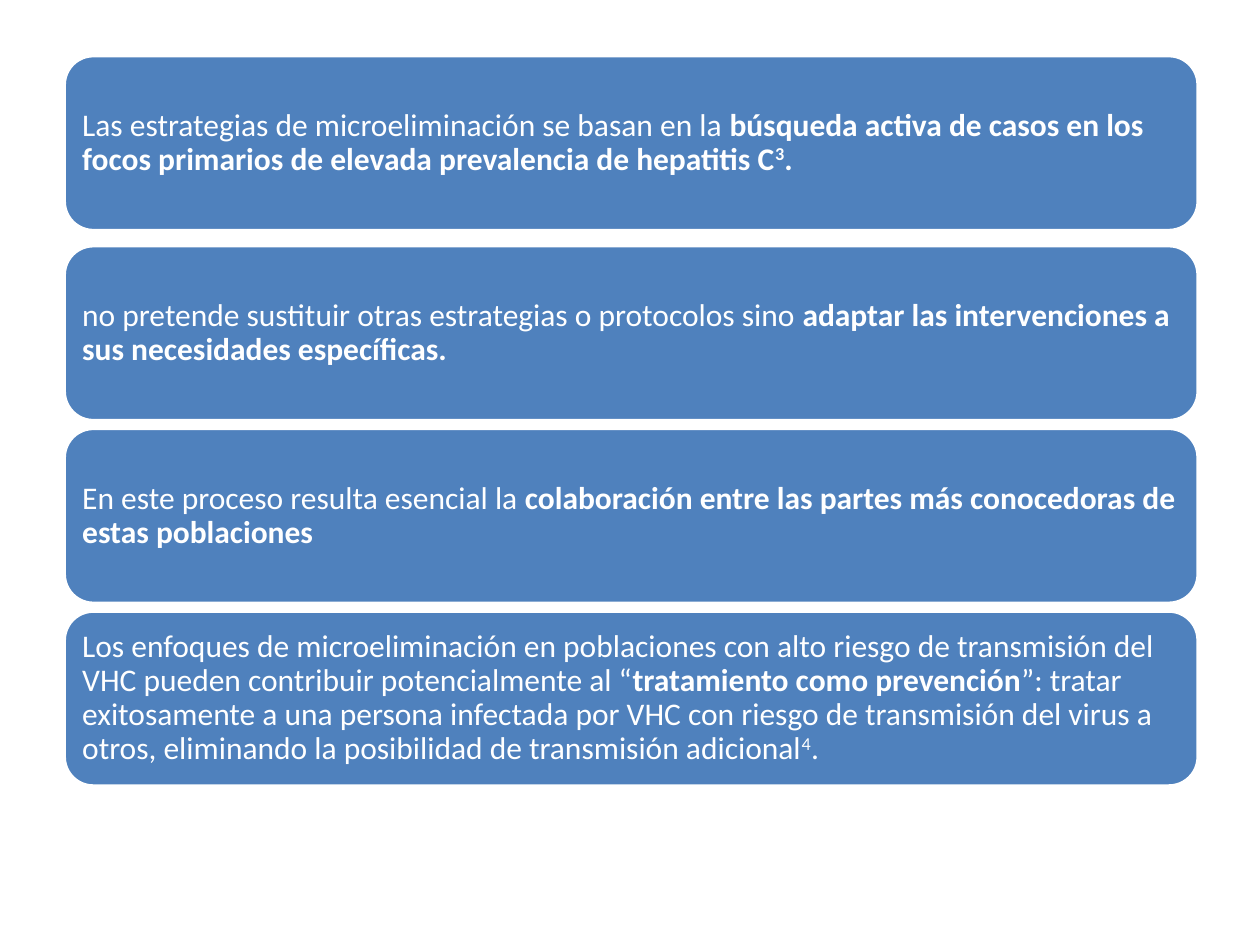
from dataclasses import dataclass
from typing import NamedTuple

from pptx import Presentation
from pptx.dml.color import RGBColor
from pptx.enum.shapes import MSO_SHAPE
from pptx.enum.text import MSO_ANCHOR, PP_ALIGN
from pptx.slide import Slide
from pptx.util import Pt

ROUNDED = MSO_SHAPE.ROUNDED_RECTANGLE
MIDDLE = MSO_ANCHOR.MIDDLE
LEFT = PP_ALIGN.LEFT


@dataclass(frozen=True)
class Theme:
    panel: RGBColor = RGBColor(0x4F, 0x81, 0xBD)
    light: RGBColor = RGBColor(0xFF, 0xFF, 0xFF)
    font: str = "Calibri"
    body_size: float = 18
    outline: float = 2


class Phrase(NamedTuple):
    text: str
    bold: bool = False
    superscript: bool = False


class Statement(NamedTuple):
    top: float
    phrases: list[Phrase]


THEME = Theme()
PANEL_LEFT, PANEL_WIDTH, PANEL_HEIGHT = 36.7, 648, 100
FIRST_TOP = 31.8
SECOND_TOP, PITCH = 140.4, 104.4

STATEMENTS = [
    Statement(FIRST_TOP, [
        Phrase("Las estrategias de microeliminación se basan en la "),
        Phrase("búsqueda activa de casos en los focos primarios de elevada "
               "prevalencia de hepatitis C", bold=True),
        Phrase("3", bold=True, superscript=True),
        Phrase(".", bold=True),
    ]),
    Statement(SECOND_TOP, [
        Phrase("no pretende sustituir otras estrategias o protocolos sino "),
        Phrase("adaptar las intervenciones a sus necesidades específicas.", bold=True),
    ]),
    Statement(SECOND_TOP + PITCH, [
        Phrase("En este proceso resulta esencial la "),
        Phrase("colaboración entre las partes más conocedoras de estas poblaciones",
               bold=True),
    ]),
    Statement(SECOND_TOP + 2 * PITCH, [
        Phrase("Los enfoques de microeliminación en poblaciones con alto riesgo de "
               "transmisión del VHC pueden contribuir potencialmente al “"),
        Phrase("tratamiento como prevención", bold=True),
        Phrase("”: tratar exitosamente a una persona infectada por VHC con riesgo de "
               "transmisión del virus a otros, eliminando la posibilidad de "
               "transmisión adicional"),
        Phrase("4", superscript=True),
        Phrase("."),
    ]),
]

FRAME_FORMAT = {
    "word_wrap": True,
    "vertical_anchor": MIDDLE,
    "margin_left": Pt(5.4),
    "margin_right": Pt(5.4),
    "margin_top": Pt(5.4),
    "margin_bottom": Pt(5.4),
}
FONT_FORMAT = {"name": THEME.font, "size": Pt(THEME.body_size)}


def apply_format(target: object, values: dict) -> None:
    for attribute, value in values.items():
        setattr(target, attribute, value)


def draw_statement(slide: Slide, statement: Statement) -> None:
    panel = slide.shapes.add_shape(
        ROUNDED, Pt(PANEL_LEFT), Pt(statement.top), Pt(PANEL_WIDTH), Pt(PANEL_HEIGHT))
    panel.shadow.inherit = False
    panel.fill.solid()
    panel.fill.fore_color.rgb = THEME.panel
    panel.line.color.rgb = THEME.light
    panel.line.width = Pt(THEME.outline)

    apply_format(panel.text_frame, FRAME_FORMAT)
    paragraph = panel.text_frame.paragraphs[0]
    apply_format(paragraph, {"alignment": LEFT, "line_spacing": 0.9})
    for phrase in statement.phrases:
        run = paragraph.add_run()
        run.text = phrase.text
        apply_format(run.font, FONT_FORMAT | {"bold": phrase.bold})
        run.font.color.rgb = THEME.light
        if phrase.superscript:
            run._r.get_or_add_rPr().set("baseline", "30000")


def main() -> None:
    presentation = Presentation()
    presentation.slide_width, presentation.slide_height = Pt(720), Pt(540)
    blank_layout = presentation.slide_layouts[6]
    slide = presentation.slides.add_slide(blank_layout)
    for statement in STATEMENTS:
        draw_statement(slide, statement)
    presentation.save("out.pptx")


if __name__ == "__main__":
    main()
